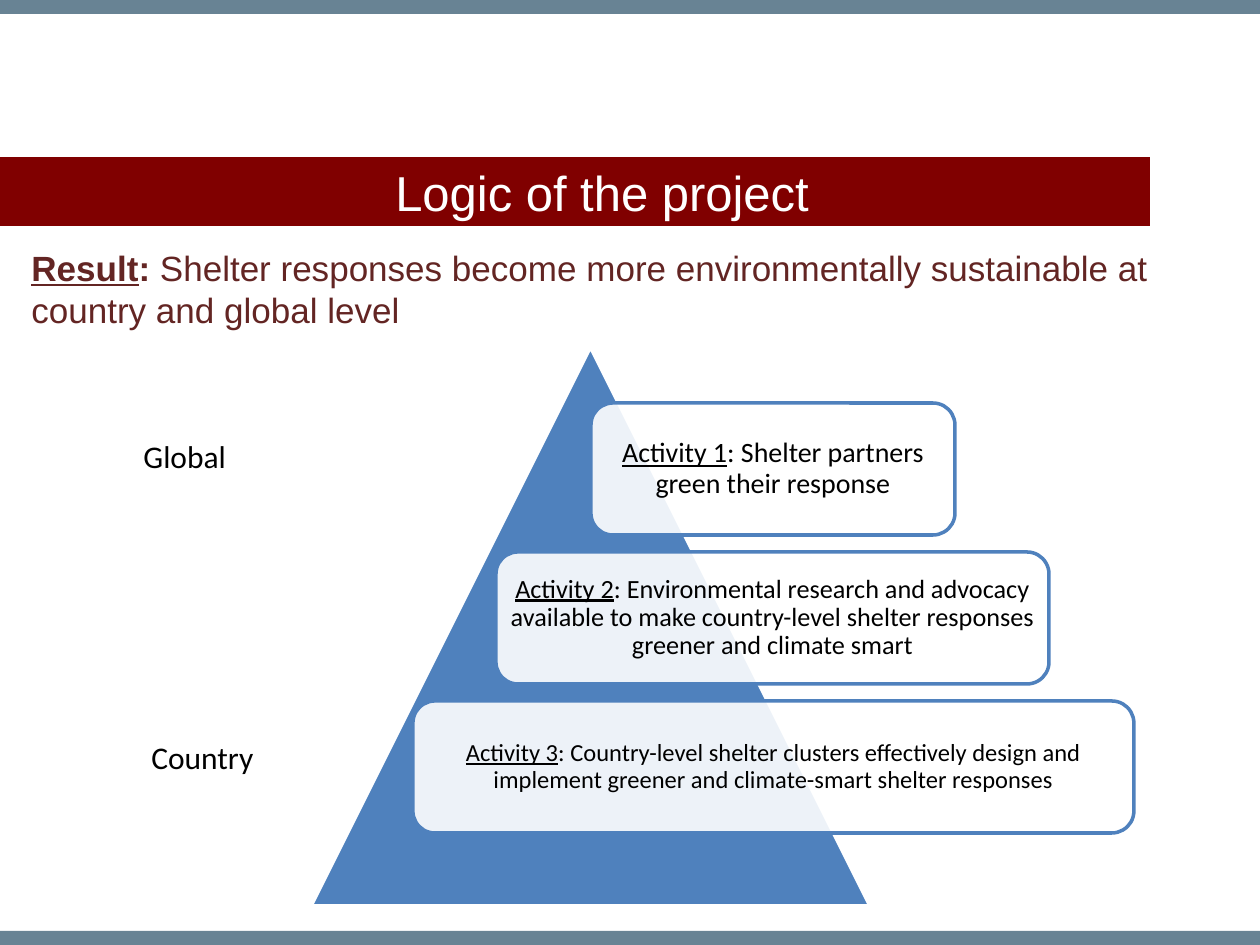
from lxml.etree import SubElement
from pptx import Presentation
from pptx.dml.color import RGBColor
from pptx.enum.shapes import MSO_SHAPE
from pptx.enum.text import MSO_ANCHOR, PP_ALIGN
from pptx.oxml.ns import qn
from pptx.util import Pt

EMU_PER_PX = 914400 // 126

BLUE, MAROON, SLATE = "4F81BD", "800000", "688394"
BROWN, WHITE, BLACK = "632523", "FFFFFF", "000000"

# Left, width, text size, side margin, label, wording
ACTIVITIES = [
    (591, 364, 16, 9, "Activity 1", ": Shelter partners green their response"),
    (496, 553, 15, 8, "Activity 2",
     ": Environmental research and advocacy available to make "
     "country-level shelter responses greener and climate smart"),
    (413, 721, 14, 8, "Activity 3",
     ": Country-level shelter clusters effectively design and "
     "implement greener and climate-smart shelter responses"),
]
ACTIVITY_TOP, ACTIVITY_PITCH, ACTIVITY_HEIGHT = 403, 149, 132


def px(*lengths):
    return [length * EMU_PER_PX for length in lengths]


def color(hex_text):
    return RGBColor.from_string(hex_text)


def add_shape(page, kind, place, fill, line=None, alpha=None):
    shape = page.shapes.add_shape(kind, *px(*place))
    shape.shadow.inherit = False
    shape.fill.solid()
    shape.fill.fore_color.rgb = color(fill)
    if alpha is not None:
        solid = shape.fill._xPr.find(qn("a:solidFill"))
        SubElement(solid[0], qn("a:alpha"), val=str(alpha * 1000))
    if line:
        shape.line.color.rgb = color(line)
        shape.line.width = Pt(2)
    else:
        shape.line.fill.background()
    return shape


def add_run(para, text, size, font, ink, bold=False, underline=False):
    span = para.add_run()
    span.text = text
    span.font.size = Pt(size)
    span.font.name = font
    span.font.color.rgb = color(ink)
    span.font.bold = bold
    span.font.underline = underline


def add_text_box(page, place, wrap=True, centered=False):
    """Add a text box and return its first paragraph."""
    frame = page.shapes.add_textbox(*px(*place)).text_frame
    frame.word_wrap = wrap
    para = frame.paragraphs[0]
    if centered:
        frame.vertical_anchor = MSO_ANCHOR.MIDDLE
        para.alignment = PP_ALIGN.CENTER
    return para


def add_activity(page, top, left, width, size, margin, label, wording):
    box = add_shape(page, MSO_SHAPE.ROUNDED_RECTANGLE,
                    (left, top, width, ACTIVITY_HEIGHT), WHITE, BLUE, alpha=90)
    frame = box.text_frame
    frame.word_wrap = True
    frame.vertical_anchor = MSO_ANCHOR.MIDDLE
    frame.margin_left = frame.margin_right = margin * EMU_PER_PX
    frame.margin_top = frame.margin_bottom = margin * EMU_PER_PX
    para = frame.paragraphs[0]
    para.alignment = PP_ALIGN.CENTER
    para.line_spacing = 0.9
    add_run(para, label, size, "Calibri", BLACK, underline=True)
    add_run(para, wording, size, "Calibri", BLACK)


def main():
    deck = Presentation()
    deck.slide_width, deck.slide_height = px(1260, 945)
    page = deck.slides.add_slide(deck.slide_layouts[6])

    # Title band and edge bars
    for place, fill in (((0, 157, 1150, 69), MAROON),
                        ((0, 0, 1260, 14), SLATE),
                        ((0, 931, 1260, 14), SLATE)):
        add_shape(page, MSO_SHAPE.RECTANGLE, place, fill)

    # Result statement
    result = add_text_box(page, (19, 240, 1222, 105))
    add_run(result, "Result", 20, "Arial", BROWN, bold=True, underline=True)
    add_run(result, ":", 20, "Arial", BROWN, bold=True)
    add_run(result, " Shelter responses become more environmentally "
            "sustainable at country and global level", 20, "Arial", BROWN)

    # Title
    title = add_text_box(page, (35, 113, 1134, 158), centered=True)
    add_run(title, "Logic of the project", 28, "Arial", WHITE)

    # Pyramid with its activities
    add_shape(page, MSO_SHAPE.ISOSCELES_TRIANGLE, (311, 347, 559, 559),
              BLUE, WHITE)
    for row, activity in enumerate(ACTIVITIES):
        add_activity(page, ACTIVITY_TOP + row * ACTIVITY_PITCH, *activity)

    # Level labels
    for place, level in (((131, 431, 108, 51), "Global"),
                         ((139, 732, 128, 51), "Country")):
        para = add_text_box(page, place, wrap=False)
        add_run(para, level, 18, "Calibri", BLACK)

    deck.save("out.pptx")


if __name__ == "__main__":
    main()
